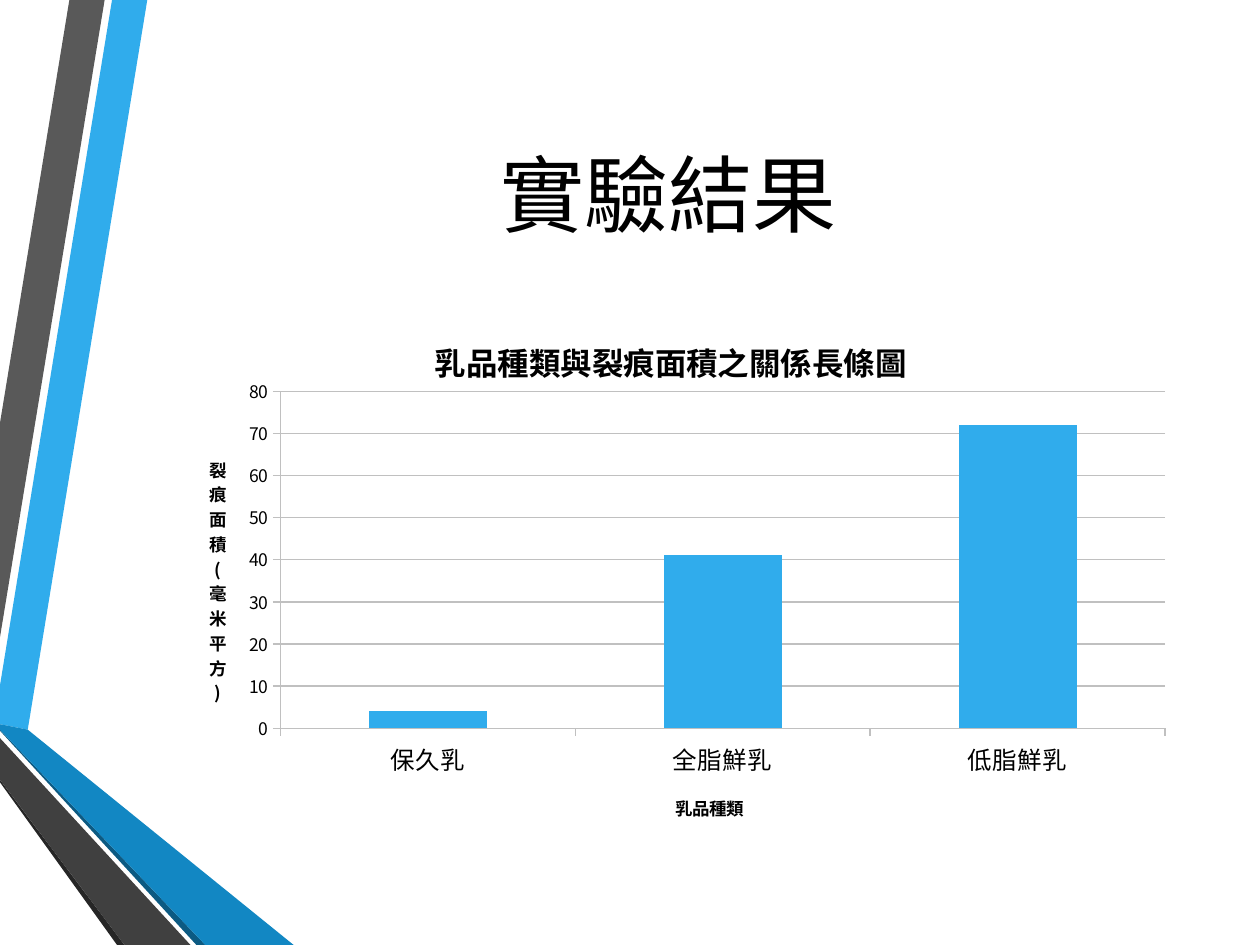
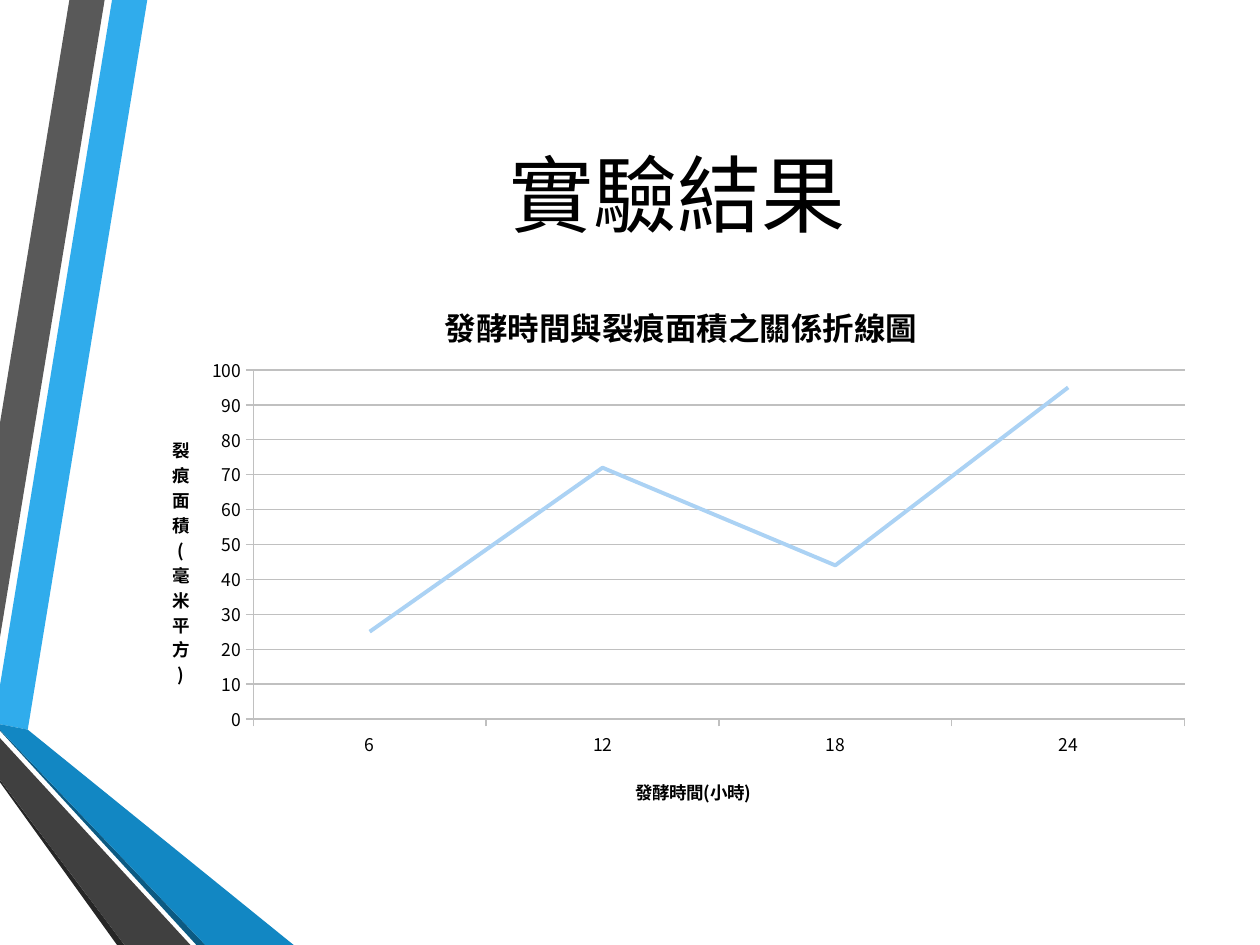
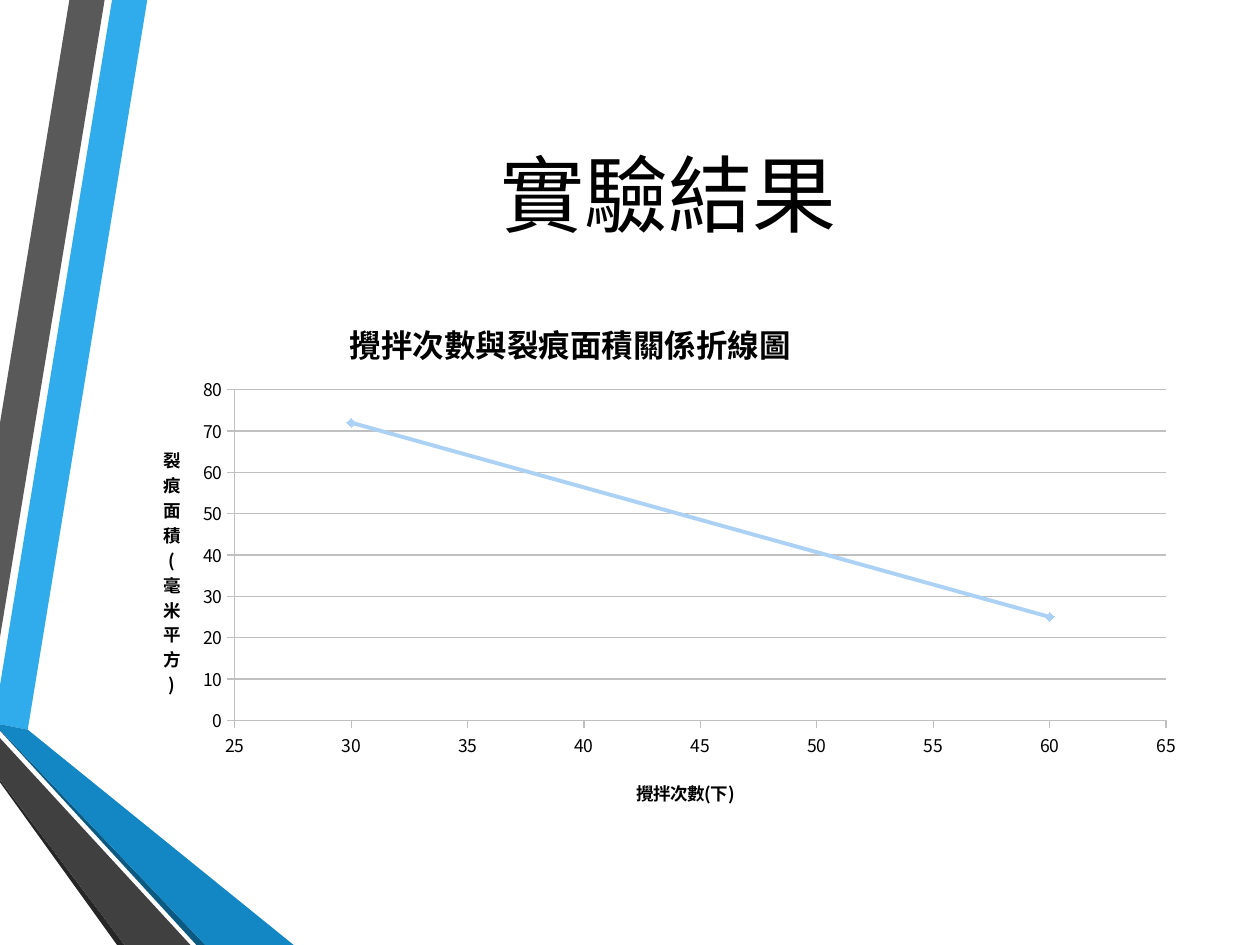
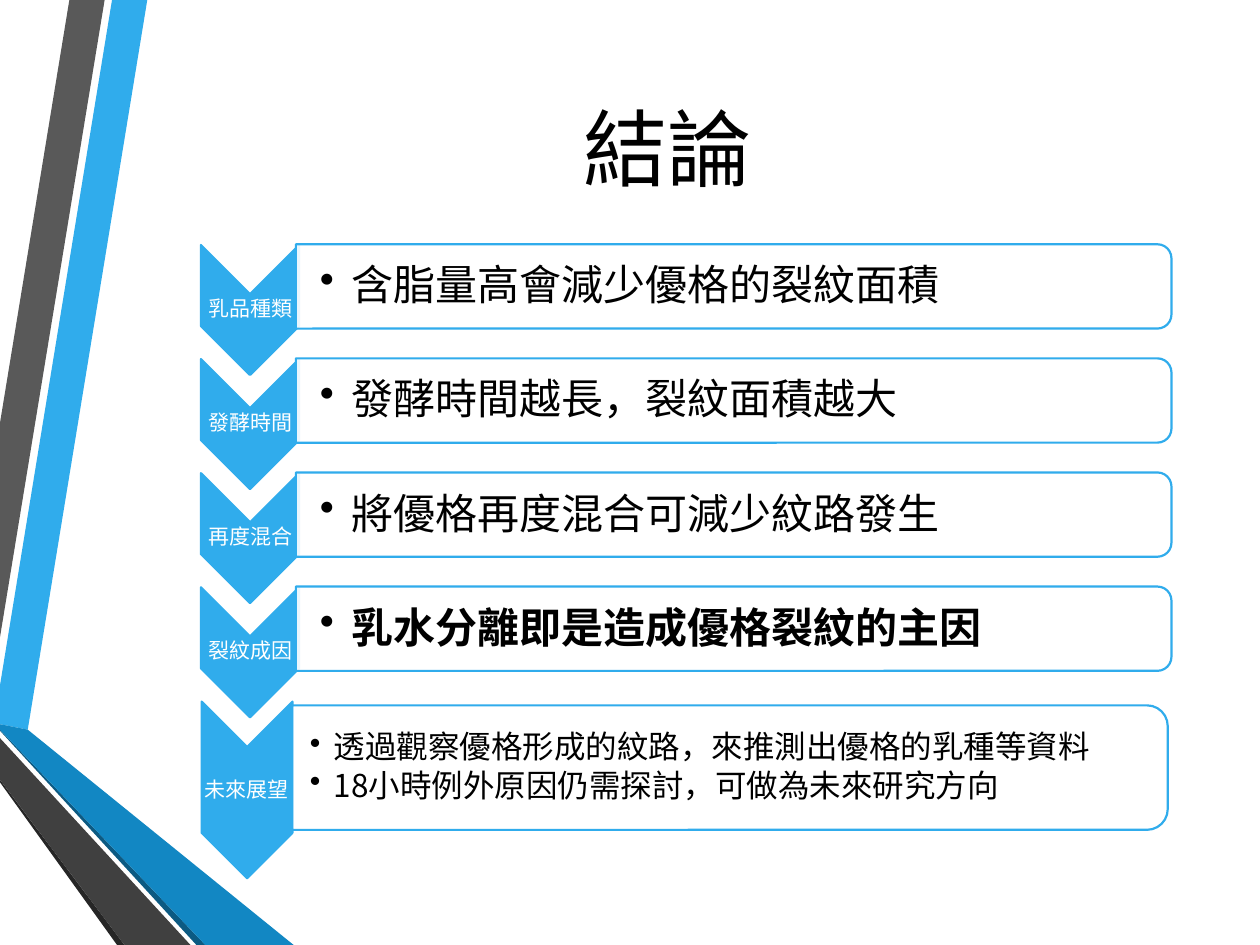
import lxml.etree
import pptx
import pptx.chart.data
import pptx.dml.color
import pptx.enum.chart
import pptx.enum.shapes
import pptx.enum.text
import pptx.oxml.ns
import pptx.util

Cm, Pt = pptx.util.Cm, pptx.util.Pt
qn = pptx.oxml.ns.qn
RGB = pptx.dml.color.RGBColor.from_string
CHART = pptx.enum.chart.XL_CHART_TYPE
SHAPE = pptx.enum.shapes.MSO_SHAPE
ALIGN = pptx.enum.text.PP_ALIGN

COLORS = {
    "accent": "30ACEC",
    "line": "ABD2F4",
    "blue": "1287C3",
    "navy": "0C5A82",
    "gray": "595959",
    "dark": "404040",
    "shade": "262626",
    "grid": "C0C0C0",
    "text": "000000",
    "white": "FFFFFF",
}
CJK = "Noto Sans CJK SC"


def add_text(page, place, lines, size, font=CJK, color="text", bold=False,
             inset=(0.25, 0.13), after=0, bullet_indent=None):
    """Add a middle-anchored text box; lines are centred unless bulleted."""
    box = page.shapes.add_textbox(*map(Cm, place))
    frame = box.text_frame
    frame.word_wrap = True
    frame.vertical_anchor = pptx.enum.text.MSO_ANCHOR.MIDDLE
    frame.margin_left = Cm(inset[0])
    frame.margin_top = frame.margin_right = frame.margin_bottom = Cm(inset[1])
    for number, line in enumerate(lines):
        para = frame.add_paragraph() if number else frame.paragraphs[0]
        para.line_spacing = 0.9
        para.space_after = Pt(size * after)
        span = para.add_run()
        span.text = line
        span.font.size = Pt(size)
        span.font.name = font
        span.font.bold = bold
        span.font.color.rgb = RGB(COLORS[color])
        if bullet_indent is None:
            para.alignment = ALIGN.CENTER
            continue
        para.alignment = ALIGN.LEFT
        para.level = 1
        properties = para._p.get_or_add_pPr()
        properties.set("marL", str(Cm(bullet_indent)))
        properties.set("indent", str(-Cm(bullet_indent)))
        lxml.etree.SubElement(properties, qn("a:buChar")).set("char", "•")


def set_layout(parent, index, percents):
    """Fix a chart part at x, y (and inner w, h), in percent of the chart."""
    for old in parent.findall(qn("c:layout")):
        parent.remove(old)
    layout = lxml.etree.Element(qn("c:layout"))
    manual = lxml.etree.SubElement(layout, qn("c:manualLayout"))
    settings = [("xMode", "edge"), ("yMode", "edge")]
    if len(percents) == 4:
        settings.insert(0, ("layoutTarget", "inner"))
    settings += [(key, str(round(value / 100, 3))) for key, value in zip("xywh", percents)]
    for key, value in settings:
        lxml.etree.SubElement(manual, qn("c:" + key)).set("val", value)
    parent.insert(index, layout)


deck = pptx.Presentation()
deck.slide_width, deck.slide_height = Cm(25.4), Cm(19.05)
blank = deck.slide_layouts[6]
for placeholder in list(blank.placeholders):
    blank.shapes.element.remove(placeholder.element)
pages = [deck.slides.add_slide(blank) for _ in range(4)]

# Ribbon bands are drawn once and moved to the shared layout
bands = [
    ("accent", [(0, 13.82), (0, 14.6), (0.56, 14.71), (2.97, 0), (2.26, 0)]),
    ("gray", [(2.11, 0), (1.4, 0), (0, 8.53), (0, 12.85)]),
    ("shade", [(0, 15.72), (0, 15.77), (2.36, 19.05), (2.51, 19.05)]),
    ("navy", [(0, 14.71), (0, 14.73), (3.96, 19.05), (4.14, 19.05)]),
    ("blue", [(0, 14.71), (4.14, 19.05), (5.92, 19.05), (0.56, 14.71), (0, 14.6)]),
    ("dark", [(0, 15.72), (2.51, 19.05), (3.84, 19.05), (0, 14.88)]),
]
for color, corners in bands:
    points = [(Cm(x), Cm(y)) for x, y in corners]
    outline = pages[0].shapes.build_freeform(*points[0])
    outline.add_line_segments(points[1:], close=True)
    band = outline.convert_to_shape()
    band.shadow.inherit = False
    band.fill.solid()
    band.fill.fore_color.rgb = RGB(COLORS[color])
    band.line.fill.background()
    blank.shapes.element.append(band.element)

# Slide titles: left, top, wording
titles = [(2.72, 1.27, "實驗結果"), (2.9, 1.27, "實驗結果"),
          (2.72, 1.27, "實驗結果"), (2.69, 0.33, "結論")]
for page, (left, top, wording) in zip(pages, titles):
    add_text(page, (left, top, 21.41, 5.51), [wording], 48)

# Result charts; "spots" are the chart, category and value titles in percent
results = [
    dict(kind=CHART.COLUMN_CLUSTERED, place=(2.72, 6.12, 21.41, 10.54),
         title="乳品種類與裂痕面積之關係長條圖", category="乳品種類", category_size=14,
         names=["保久乳", "全脂鮮乳", "低脂鮮乳"], values=[4, 41, 72], top=80,
         plot=(13.7, 16.9, 83.3, 65), spots=[(27.7, 5), (50.6, 94), (6.7, 28.7)]),
    dict(kind=CHART.LINE, place=(2.9, 5.33, 21.41, 11.33),
         title="發酵時間與裂痕面積之關係折線圖", category="發酵時間(小時)", category_size=10,
         names=["6", "12", "18", "24"], values=[25, 72, 44, 95], top=100,
         plot=(10.3, 18.8, 87.7, 62.1), spots=[(27.8, 5.3), (46, 90.8), (2.4, 29.9)]),
    dict(kind=CHART.XY_SCATTER_SMOOTH, place=(2.72, 5.72, 21.41, 10.95),
         title="攪拌次數與裂痕面積關係折線圖", category="攪拌次數(下)", category_size=10,
         names=[30, 60], values=[72, 25], top=80,
         plot=(9.4, 19.5, 87.7, 60.9), spots=[(19.7, 5.1), (46.9, 90.5), (2.4, 29.2)]),
]
for page, result in zip(pages, results):
    is_scatter = result["kind"] == CHART.XY_SCATTER_SMOOTH
    if is_scatter:
        data = pptx.chart.data.XyChartData()
        points = data.add_series("Series 1")
        for x, y in zip(result["names"], result["values"]):
            points.add_data_point(x, y)
    else:
        data = pptx.chart.data.CategoryChartData()
        data.categories = result["names"]
        data.add_series("Series 1", result["values"])
    chart = page.shapes.add_chart(result["kind"], *map(Cm, result["place"]), data).chart
    chart.has_legend = False
    chart.font.size = Pt(10)
    chart.font.name = "Calibri"
    chart.font.color.rgb = RGB(COLORS["text"])

    category_axis, value_axis = chart.category_axis, chart.value_axis
    headings = [(chart.chart_title, result["title"], 18),
                (category_axis.axis_title, result["category"], 10),
                (value_axis.axis_title, "裂痕面積(毫米平方)", 10)]
    for heading, wording, size in headings:
        span = heading.text_frame.paragraphs[0].add_run()
        span.text = wording
        span.font.size = Pt(size)
        span.font.bold = True
        span.font.name = CJK
        span.font.color.rgb = RGB(COLORS["text"])

    for axis, size in ((category_axis, result["category_size"]), (value_axis, 10)):
        axis.has_major_gridlines = axis is value_axis
        axis.major_tick_mark = pptx.enum.chart.XL_TICK_MARK.OUTSIDE
        axis.minor_tick_mark = pptx.enum.chart.XL_TICK_MARK.NONE
        axis.tick_labels.font.size = Pt(size)
        axis.tick_labels.font.name = CJK
        axis.format.line.color.rgb = RGB(COLORS["grid"])
        axis.format.line.width = Pt(0.75)
    value_axis.minimum_scale, value_axis.maximum_scale = 0, result["top"]
    value_axis.major_unit = 10
    value_axis.major_gridlines.format.line.color.rgb = RGB(COLORS["grid"])
    value_axis.major_gridlines.format.line.width = Pt(0.75)
    if is_scatter:
        category_axis.minimum_scale, category_axis.maximum_scale = 25, 65
        category_axis.major_unit = 5

    plot = chart.plots[0]
    plot.vary_by_categories = False
    series = plot.series[0]
    if result["kind"] == CHART.COLUMN_CLUSTERED:
        plot.gap_width = 150
        series.format.fill.solid()
        series.format.fill.fore_color.rgb = RGB(COLORS["accent"])
    else:
        series.format.line.color.rgb = RGB(COLORS["line"])
        series.format.line.width = Pt(2.25)
        if is_scatter:
            series.marker.style = pptx.enum.chart.XL_MARKER_STYLE.DIAMOND
            series.marker.size = 5
            series.marker.format.fill.solid()
            series.marker.format.fill.fore_color.rgb = RGB(COLORS["line"])
            series.marker.format.line.color.rgb = RGB(COLORS["line"])
        else:
            series.smooth = False
            series.marker.style = pptx.enum.chart.XL_MARKER_STYLE.NONE

    set_layout(next(chart.element.iter(qn("c:plotArea"))), 0, result["plot"])
    title_elements = list(chart.element.iter(qn("c:title")))
    for element, spot in zip(title_elements, result["spots"]):
        set_layout(element, 1, spot)
    body = next(title_elements[2].iter(qn("a:bodyPr")))
    body.set("rot", "0")
    body.set("vert", "wordArtVert")

    for latin in list(chart.element.iter(qn("a:latin"))):
        east = lxml.etree.Element(qn("a:ea"))
        east.set("typeface", CJK)
        latin.addnext(east)

# Conclusions: four equal rows and a taller last one
conclusions = [
    ("乳品種類", ["含脂量高會減少優格的裂紋面積"]),
    ("發酵時間", ["發酵時間越長，裂紋面積越大"]),
    ("再度混合", ["將優格再度混合可減少紋路發生"]),
    ("裂紋成因", ["乳水分離即是造成優格裂紋的主因"]),
    ("未來展望", ["透過觀察優格形成的紋路，來推測出優格的乳種等資料",
              "18小時例外原因仍需探討，可做為未來研究方向"]),
]
page = pages[3]
for row, (label, lines) in enumerate(conclusions):
    shift = 2.3 * row
    if row < 4:
        chevron_place = (3.73, 5.26 + shift, 2.62, 1.98)
        label_place = (4.06, 5.92 + shift, 1.98, 0.64)
        panel_place = (13.94, -3.05 + shift, 1.7, 17.65)
        text_place = (5.97, 5.03 + shift, 17.55, 1.52)
        size, indent, inset = 24, 0.64, (0.48, 0.05)
    else:
        chevron_place = (3.2, 15.01, 3.56, 1.83)
        label_place = (4.06, 15.06, 1.83, 1.75)
        panel_place = (13.46, 6.65, 2.51, 17.65)
        text_place = (5.89, 14.35, 17.53, 2.26)
        size, indent, inset = 18, 0.48, (0.36, 0.03)
    for preset, place, color in ((SHAPE.CHEVRON, chevron_place, "accent"),
                                 (SHAPE.ROUND_2_SAME_RECTANGLE, panel_place, "white")):
        shape = page.shapes.add_shape(preset, *map(Cm, place))
        shape.rotation = 90
        shape.shadow.inherit = False
        shape.fill.solid()
        shape.fill.fore_color.rgb = RGB(COLORS[color])
        shape.line.color.rgb = RGB(COLORS["accent"])
        shape.line.width = Pt(1.25)
        if color == "white":
            fill_color = next(shape.element.iter(qn("a:srgbClr")))
            lxml.etree.SubElement(fill_color, qn("a:alpha")).set("val", "90000")
        else:
            add_text(page, label_place, [label], 12, "Calibri", "white",
                     inset=(0.03, 0.03), after=0.35)
    add_text(page, text_place, lines, size, bold=label == "裂紋成因",
             inset=inset, after=0.15, bullet_indent=indent)

# East Asian glyphs use the same typeface everywhere
for page in pages:
    for latin in list(page.element.iter(qn("a:latin"))):
        east = lxml.etree.Element(qn("a:ea"))
        east.set("typeface", CJK)
        latin.addnext(east)

deck.save("out.pptx")
